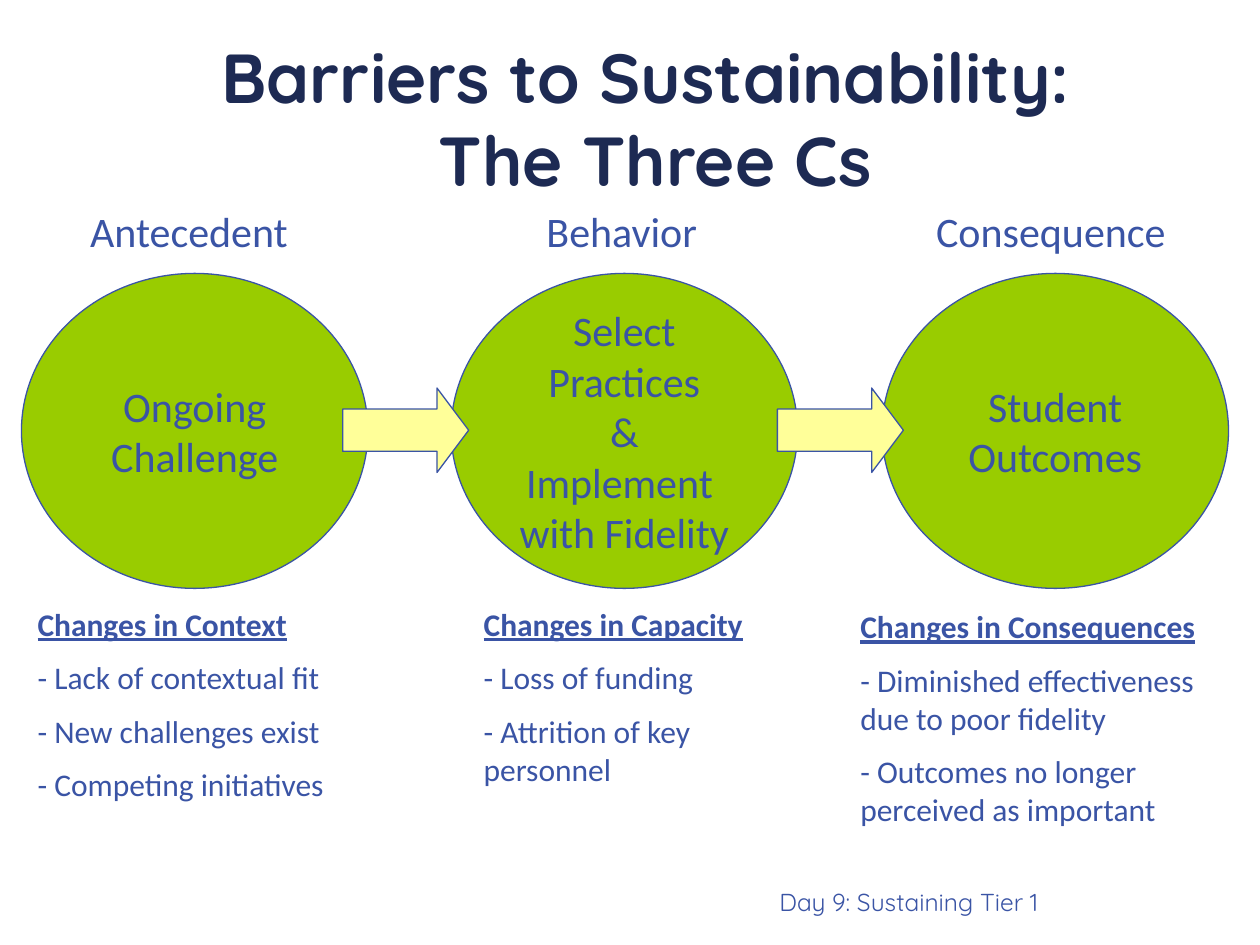
from pptx import Presentation
from pptx.dml.color import RGBColor
from pptx.enum import shapes, text
from pptx.util import Inches, Pt

COLORS = {"ink": "3A54A5", "title": "1D2A53", "circle": "99CC00", "arrow": "FFFF99"}
CENTER = text.PP_ALIGN.CENTER
LEFT = text.PP_ALIGN.LEFT
CIRCLE_TOP, CIRCLE_WIDTH, CIRCLE_HEIGHT = 2.17, 2.75, 2.5
ARROW_LEFTS = [2.72, 6.17]

STAGES = [
    {
        "label": ("Antecedent", 0.5, 2),
        "circle": (0.17, ["Ongoing", "Challenge"]),
        "changes": (0.2, 4.75, 2.76, 2.21, [
            "Changes in Context", "- Lack of contextual fit",
            "- New challenges exist", "- Competing initiatives"]),
    },
    {
        "label": ("Behavior", 4.06, 1.75),
        "circle": (3.58, ["Select Practices", "& Implement ", "with Fidelity"]),
        "changes": (3.74, 4.75, 2.76, 1.6, [
            "Changes in Capacity", "- Loss of funding",
            "- Attrition of key personnel"]),
    },
    {
        "label": ("Consequence", 7.13, 2.42),
        "circle": (7, ["Student", "Outcomes"]),
        "changes": (6.73, 4.77, 3.27, 1.9, [
            "Changes in Consequences",
            "- Diminished effectiveness due to poor fidelity",
            "- Outcomes no longer perceived as important"]),
    },
]


def rgb(name):
    """Return the named palette colour."""
    return RGBColor.from_string(COLORS[name])


def write_lines(shape, lines, size, align=CENTER, font="Calibri", color="ink"):
    """Write one paragraph per line and return the paragraphs."""
    frame = shape.text_frame
    frame.word_wrap = True
    frame.text = "\n".join(lines)
    for para in frame.paragraphs:
        para.alignment = align
        para.font.name = font
        para.font.size = Pt(size)
        para.font.color.rgb = rgb(color)
    return frame.paragraphs


def add_text(slide, lines, left, top, width, height, size, **style):
    """Add a wrapping text box and return it."""
    box = slide.shapes.add_textbox(*map(Inches, (left, top, width, height)))
    write_lines(box, lines, size, **style)
    return box


def add_outlined(slide, kind, left, top, width, height, fill):
    """Add a filled preset shape with a thin outline."""
    shape = slide.shapes.add_shape(kind, *map(Inches, (left, top, width, height)))
    shape.shadow.inherit = False
    shape.fill.solid()
    shape.fill.fore_color.rgb = rgb(fill)
    shape.line.color.rgb = rgb("ink")
    shape.line.width = Pt(0.75)
    return shape


def add_circle(slide, left, lines):
    """Add a stage circle with centred text."""
    circle = add_outlined(slide, shapes.MSO_SHAPE.OVAL, left, CIRCLE_TOP,
                          CIRCLE_WIDTH, CIRCLE_HEIGHT, "circle")
    circle.text_frame.vertical_anchor = text.MSO_ANCHOR.MIDDLE
    write_lines(circle, lines, 24)


def add_arrow(slide, left):
    """Add a block arrow between two circles."""
    arrow = add_outlined(slide, shapes.MSO_SHAPE.RIGHT_ARROW, left, 3.08, 1, 0.67, "arrow")
    arrow.adjustments[0] = 0.5
    arrow.adjustments[1] = 0.375


def add_changes(slide, left, top, width, height, lines):
    """Add an underlined heading with the changes listed below it."""
    box = add_text(slide, lines, left, top, width, height, 18, align=LEFT)
    heading, *items = box.text_frame.paragraphs
    heading.font.bold = True
    heading.font.underline = True
    for para in items:
        para.space_before = Pt(9)


def add_title(slide):
    """Add the two-line slide title."""
    box = add_text(slide, ["Barriers to Sustainability: ", "The Three Cs"],
                   0.64, 0.43, 9.12, 1, 39.6, font="Quicksand", color="title")
    box.text_frame.vertical_anchor = text.MSO_ANCHOR.MIDDLE
    for para in box.text_frame.paragraphs:
        para.font.bold = True


def main():
    """Build and save the slide."""
    deck = Presentation()
    deck.slide_width, deck.slide_height = Inches(10), Inches(7.5)
    slide = deck.slides.add_slide(deck.slide_layouts[6])
    add_text(slide, ["Day 9: Sustaining Tier 1"], 2.85, 6.99, 5.49, 0.34, 14,
             align=text.PP_ALIGN.RIGHT, font="Quicksand")
    for stage in STAGES:
        add_circle(slide, *stage["circle"])
    for left in ARROW_LEFTS:
        add_arrow(slide, left)
    for stage in STAGES:
        label, left, width = stage["label"]
        add_text(slide, [label], left, 1.58, width, 0.5, 24)
        add_changes(slide, *stage["changes"])
    add_title(slide)
    deck.save("out.pptx")


if __name__ == "__main__":
    main()
